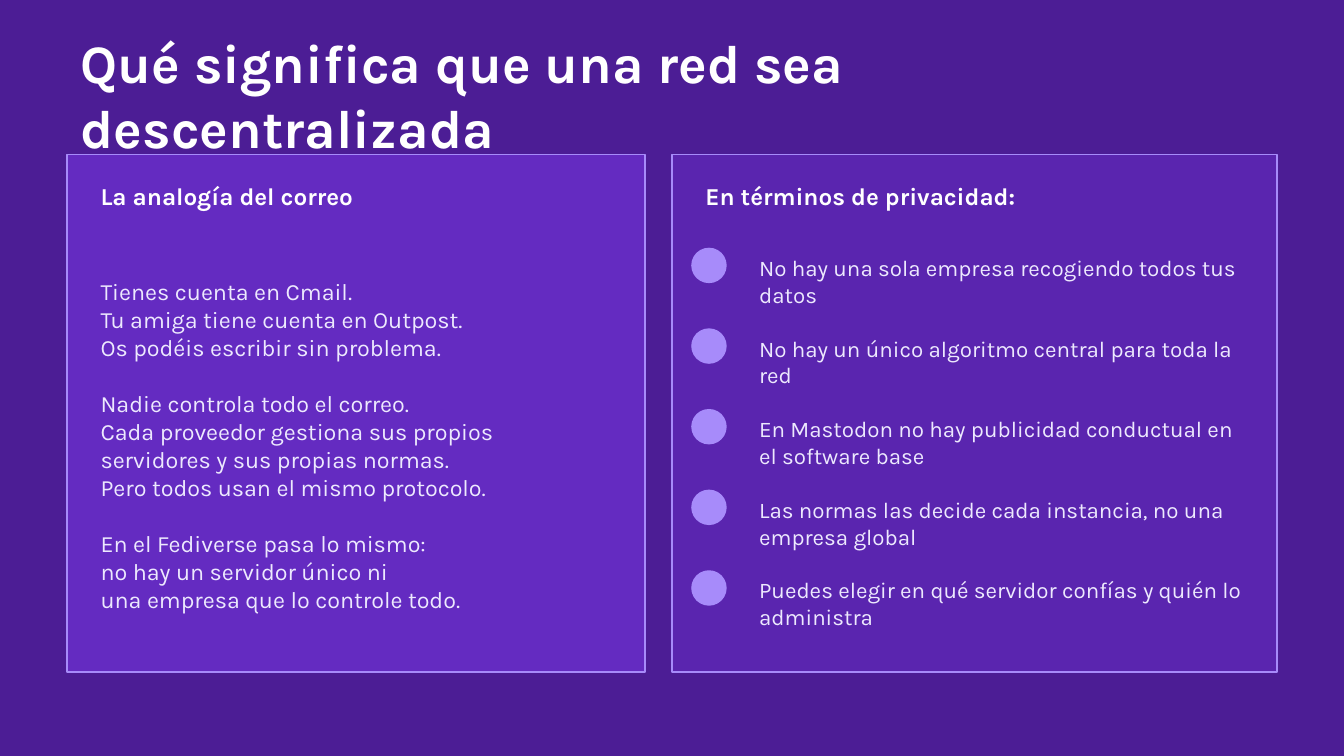
"""Build a slide that explains what a decentralised network means."""
from pptx import Presentation
from pptx.dml.color import RGBColor
from pptx.enum.shapes import MSO_SHAPE
from pptx.enum.text import MSO_ANCHOR, MSO_AUTO_SIZE, PP_ALIGN
from pptx.oxml.ns import qn
from pptx.util import Inches, Pt
from lxml.etree import SubElement

FONT = "Karla"
BACKGROUND = RGBColor(0x4C, 0x1D, 0x95)
PANEL = RGBColor(0x7C, 0x3A, 0xED)
ACCENT = RGBColor(0xA7, 0x8B, 0xFA)
WHITE = RGBColor(0xFF, 0xFF, 0xFF)
BODY = RGBColor(0xED, 0xE9, 0xFE)

TITLE = "Qué significa que una red sea descentralizada"
ANALOGY = [
    [
        "Tienes cuenta en Cmail.",
        "Tu amiga tiene cuenta en Outpost.",
        "Os podéis escribir sin problema.",
    ],
    [
        "Nadie controla todo el correo.",
        "Cada proveedor gestiona sus propios",
        "servidores y sus propias normas.",
        "Pero todos usan el mismo protocolo.",
    ],
    [
        "En el Fediverse pasa lo mismo:",
        "no hay un servidor único ni",
        "una empresa que lo controle todo.",
    ],
]
PRIVACY = [
    "No hay una sola empresa recogiendo todos tus datos",
    "No hay un único algoritmo central para toda la red",
    "En Mastodon no hay publicidad conductual en el software base",
    "Las normas las decide cada instancia, no una empresa global",
    "Puedes elegir en qué servidor confías y quién lo administra",
]
PANEL_TOP = 1.15
FIRST_ITEM_TOP = 1.85
ITEM_STEP = 0.6


def fill_text(shape, groups, size, color, bold=False):
    """Write groups of lines into a shape, with a one-line gap between groups."""
    frame = shape.text_frame
    frame.word_wrap = True
    frame.auto_size = MSO_AUTO_SIZE.NONE
    frame.vertical_anchor = MSO_ANCHOR.MIDDLE
    frame.text = "\n".join(line for group in groups for line in group)
    group_starts = [group[0] for group in groups[1:]]
    for paragraph in frame.paragraphs:
        paragraph.alignment = PP_ALIGN.LEFT
        paragraph.space_before = Pt(15 if paragraph.text in group_starts else 0)
        paragraph.font.name = FONT
        paragraph.font.size = Pt(size)
        paragraph.font.bold = bold
        paragraph.font.color.rgb = color


def add_text(slide, left, top, width, height, groups, size, color, bold=False):
    """Add a text box holding groups of lines."""
    box = slide.shapes.add_textbox(
        Inches(left), Inches(top), Inches(width), Inches(height)
    )
    fill_text(box, groups, size, color, bold)


def add_outlined_shape(slide, kind, left, top, width, height, color):
    """Add a filled shape with the accent outline and return it."""
    shape = slide.shapes.add_shape(
        kind, Inches(left), Inches(top), Inches(width), Inches(height)
    )
    shape.shadow.inherit = False
    shape.fill.solid()
    shape.fill.fore_color.rgb = color
    shape.line.color.rgb = ACCENT
    shape.line.width = Pt(1)
    return shape


def add_panel(slide, left, width, opacity, heading):
    """Add a translucent panel with its heading."""
    panel = add_outlined_shape(
        slide, MSO_SHAPE.RECTANGLE, left, PANEL_TOP, width, 3.85, PANEL
    )
    color = panel.element.spPr.find(qn("a:solidFill")).find(qn("a:srgbClr"))
    SubElement(color, qn("a:alpha")).set("val", str(opacity * 1000))
    add_text(
        slide, left + 0.15, PANEL_TOP + 0.1, width - 0.3, 0.42,
        [[heading]], 13, WHITE, True,
    )


def add_item(slide, top, text):
    """Add a privacy point with its round marker."""
    add_outlined_shape(slide, MSO_SHAPE.OVAL, 5.15, top, 0.25, 0.25, ACCENT)
    add_text(slide, 5.55, top - 0.02, 3.8, 0.52, [[text]], 12, BODY)


def add_title(slide):
    """Place and format the title placeholder."""
    title = slide.shapes.title
    title.left, title.top = Inches(0.5), Inches(0.35)
    title.width, title.height = Inches(9), Inches(0.7)
    fill_text(title, [[TITLE]], 29, WHITE, True)


def main():
    """Build and save the presentation."""
    presentation = Presentation()
    presentation.slide_width = Inches(10)
    presentation.slide_height = Inches(10) * 9 // 16
    slide = presentation.slides.add_slide(presentation.slide_layouts[5])
    slide.background.fill.solid()
    slide.background.fill.fore_color.rgb = BACKGROUND

    add_title(slide)
    add_panel(slide, 0.5, 4.3, 50, "La analogía del correo")
    add_text(slide, 0.65, 1.76, 4, 3.1, ANALOGY, 12.5, BODY)
    add_panel(slide, 5, 4.5, 30, "En términos de privacidad:")
    for index, text in enumerate(PRIVACY):
        add_item(slide, FIRST_ITEM_TOP + index * ITEM_STEP, text)

    presentation.save("out.pptx")


if __name__ == "__main__":
    main()
